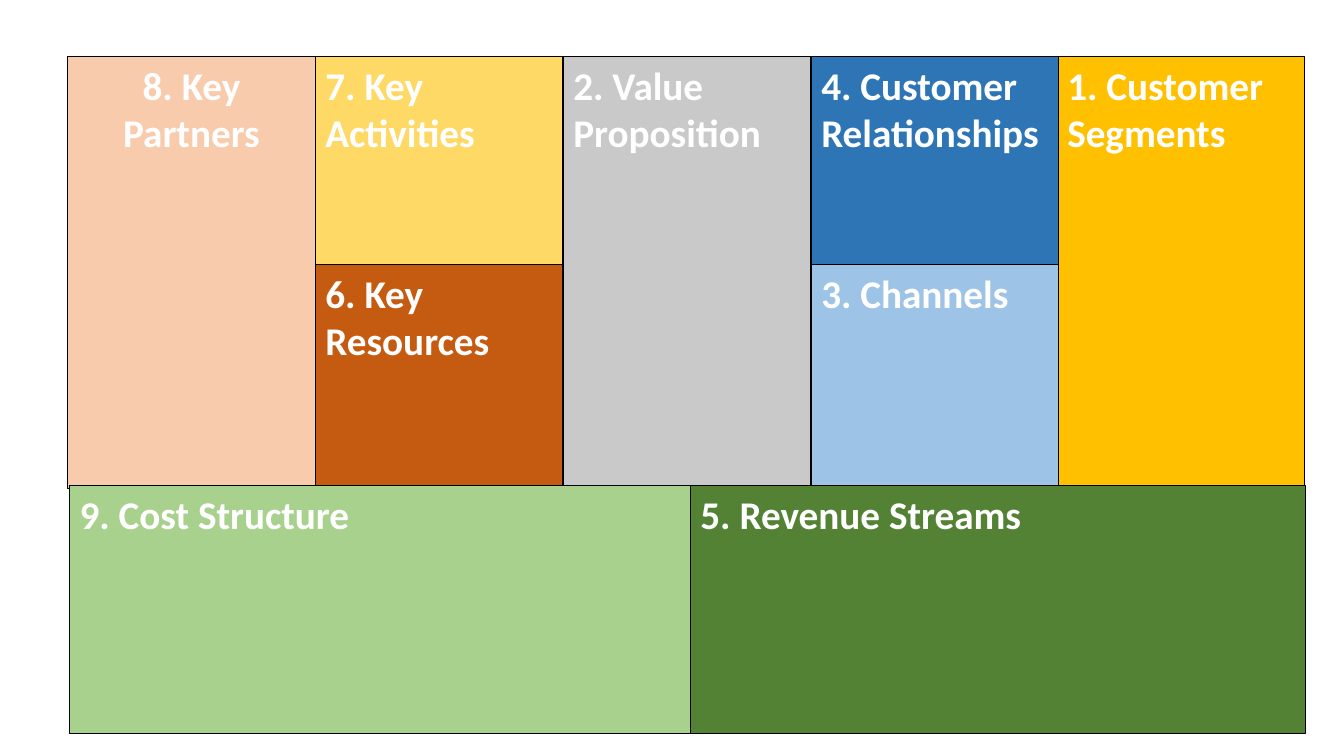
import pptx
import pptx.util
import pptx.dml.color
import pptx.enum.shapes
import pptx.enum.text

Pt = pptx.util.Pt
RGB = pptx.dml.color.RGBColor
ALIGN = pptx.enum.text.PP_ALIGN

BLACK = RGB(0x00, 0x00, 0x00)
WHITE = RGB(0xFF, 0xFF, 0xFF)
PEACH = RGB(0xF8, 0xCB, 0xAD)
GREY = RGB(0xC9, 0xC9, 0xC9)
YELLOW = RGB(0xFF, 0xD9, 0x66)
RUST = RGB(0xC5, 0x5A, 0x11)
BLUE = RGB(0x2E, 0x75, 0xB6)
SKY = RGB(0x9D, 0xC3, 0xE6)
AMBER = RGB(0xFF, 0xC0, 0x00)
MINT = RGB(0xA9, 0xD1, 0x8E)
GREEN = RGB(0x54, 0x82, 0x35)


def add_block(shapes, box, label, fill, align=ALIGN.LEFT):
    left, top, width, height = box
    block = shapes.add_shape(
        pptx.enum.shapes.MSO_SHAPE.RECTANGLE,
        Pt(left), Pt(top), Pt(width), Pt(height))
    block.shadow.inherit = False
    block.fill.solid()
    block.fill.fore_color.rgb = fill
    block.line.color.rgb = BLACK
    block.line.width = Pt(1)
    frame = block.text_frame
    frame.word_wrap = True
    frame.vertical_anchor = pptx.enum.text.MSO_ANCHOR.TOP
    para = frame.paragraphs[0]
    para.alignment = align
    run = para.add_run()
    run.text = label
    run.font.name = "Calibri"
    run.font.size = Pt(28)
    run.font.bold = True
    run.font.color.rgb = WHITE


def add_columns(shapes, box):
    left, top, width, height = box
    tile = 176.5
    step = 177.1
    split = 148.5
    last = left + width - tile
    tall = [
        (left, step, "8. Key Partners", PEACH, ALIGN.CENTER),
        (left + 2 * step, tile, "2. Value Proposition", GREY, ALIGN.LEFT),
        (last, tile, "1. Customer Segments", AMBER, ALIGN.LEFT),
    ]
    pairs = [
        (1, ("7. Key Activities", YELLOW), ("6. Key Resources", RUST)),
        (3, ("4. Customer Relationships", BLUE), ("3. Channels", SKY)),
    ]
    for edge, wide, label, fill, align in tall:
        add_block(shapes, (edge, top, wide, height), label, fill, align)
    for col, upper, lower in pairs:
        edge = left + col * step
        add_block(shapes, (edge, top, tile, split), *upper)
        add_block(shapes, (edge, top + split, tile, height - split), *lower)


def add_base(shapes, box):
    left, top, width, height = box
    cost = 443.5
    add_block(shapes, (left, top, cost, height), "9. Cost Structure", MINT)
    add_block(shapes, (left + cost, top, width - cost, height),
              "5. Revenue Streams", GREEN)


def main():
    deck = pptx.Presentation()
    deck.slide_width = Pt(960)
    deck.slide_height = Pt(540)
    slide = deck.slides.add_slide(deck.slide_layouts[6])
    add_columns(slide.shapes, (48.25, 40.25, 883.5, 308.5))
    add_base(slide.shapes, (49.75, 347, 882.75, 177))
    deck.save("out.pptx")


if __name__ == "__main__":
    main()
